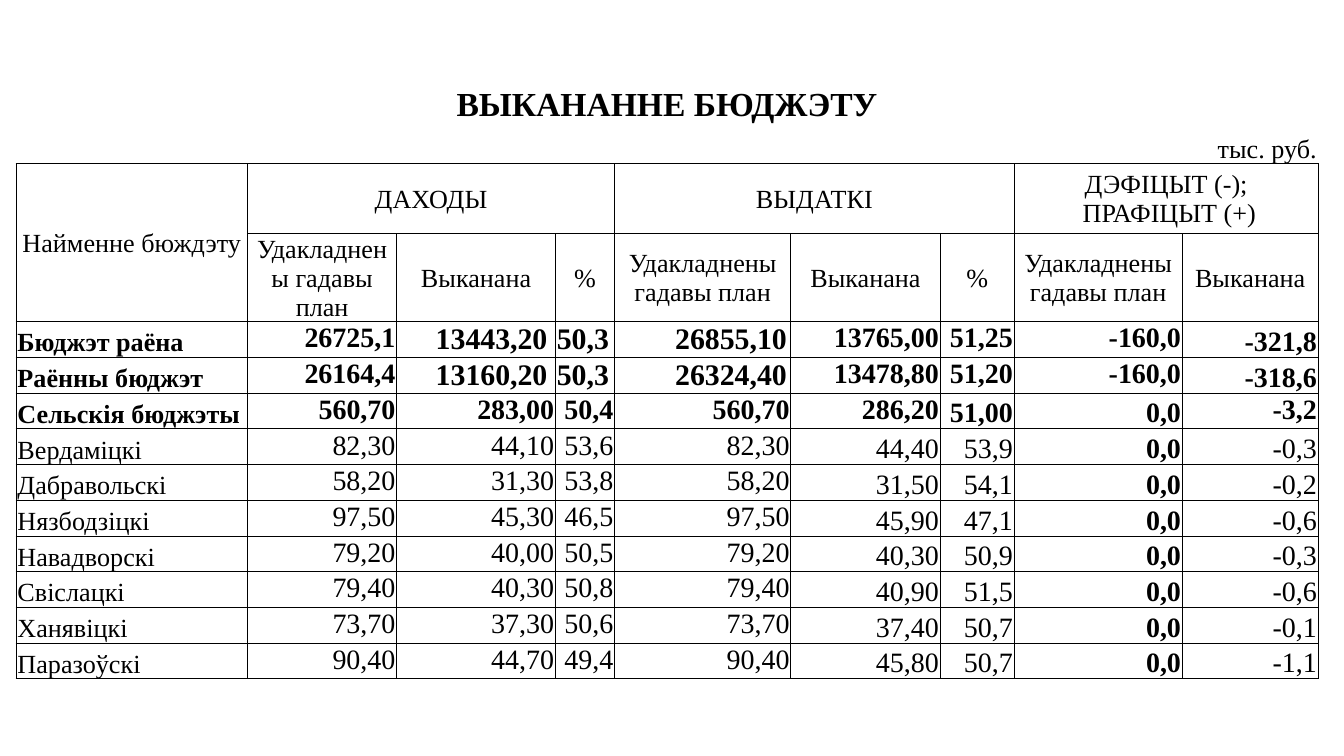
from lxml import etree
from pptx import Presentation
from pptx import util as u
from pptx.dml import color
from pptx.enum import text
from pptx.oxml import ns

COLORS = {"ink": "000000"}
FONT = "Times New Roman"
LEFT, CENTER, RIGHT = text.PP_ALIGN.LEFT, text.PP_ALIGN.CENTER, text.PP_ALIGN.RIGHT
TOP, MIDDLE, BOTTOM = text.MSO_ANCHOR.TOP, text.MSO_ANCHOR.MIDDLE, text.MSO_ANCHOR.BOTTOM

COLUMN_WIDTHS = [1.72, 1, 0.11, 0.78, 0.4, 0.44, 1.31, 0.89, 0.22, 0.55, 1.25, 0.12, 0.89]
# First grid column and column span of each field
FIELDS = [(0, 1), (1, 2), (3, 2), (5, 1), (6, 1), (7, 2), (9, 1), (10, 1), (11, 2)]
TITLE_ROW, UNIT_ROW, GROUP_ROW, FIELD_ROW, FIRST_BUDGET_ROW = range(5)
HEADER_HEIGHTS = [0.34, 0.27, 0.52, 0.65]

GROUPS = [(1, 5, "ДАХОДЫ"), (6, 4, "ВЫДАТКІ"), (10, 3, "ДЭФІЦЫТ (-);\n ПРАФІЦЫТ (+)")]
PLAN, DONE = "Удакладнены гадавы план", "Выканана"
FIELD_NAMES = [PLAN, DONE, "%", PLAN, DONE, "%", PLAN, DONE]

BUDGETS = [
    ("Бюджэт раёна", "26725,1", "13443,20", "50,3", "26855,10", "13765,00", "51,25", "-160,0", "-321,8"),
    ("Раённы бюджэт", "26164,4", "13160,20", "50,3", "26324,40", "13478,80", "51,20", "-160,0", "-318,6"),
    ("Сельскія бюджэты", "560,70", "283,00", "50,4", "560,70", "286,20", "51,00", "0,0", "-3,2"),
    ("Вердаміцкі", "82,30", "44,10", "53,6", "82,30", "44,40", "53,9", "0,0", "-0,3"),
    ("Дабравольскі", "58,20", "31,30", "53,8", "58,20", "31,50", "54,1", "0,0", "-0,2"),
    ("Нязбодзіцкі", "97,50", "45,30", "46,5", "97,50", "45,90", "47,1", "0,0", "-0,6"),
    ("Навадворскі", "79,20", "40,00", "50,5", "79,20", "40,30", "50,9", "0,0", "-0,3"),
    ("Свіслацкі", "79,40", "40,30", "50,8", "79,40", "40,90", "51,5", "0,0", "-0,6"),
    ("Ханявіцкі", "73,70", "37,30", "50,6", "73,70", "37,40", "50,7", "0,0", "-0,1"),
    ("Паразоўскі", "90,40", "44,70", "49,4", "90,40", "45,80", "50,7", "0,0", "-1,1"),
]
# Left indents of the larger, left-aligned totals in the first two rows
TOTAL_INDENTS = {2: 0.28, 3: 0, 4: 0.44}
# Fields set at the top of the cell, for each total row and for the villages
TOTAL_TOP_FIELDS = [{1, 2, 3, 4, 5, 6, 7}] * 2 + [{1, 2, 3, 4, 5, 8}]
VILLAGE_TOP_FIELDS = {1, 2, 3, 4}
BALANCE_PLAN = 7


def write(cell, words, size=14, bold=False, align=CENTER, anchor=MIDDLE, indent=0):
    cell.vertical_anchor = anchor
    cell.margin_left = u.Inches(0.01 + indent)
    cell.text_frame.text = words
    for paragraph in cell.text_frame.paragraphs:
        paragraph.alignment = align
        for run in paragraph.runs:
            run.font.name = FONT
            run.font.size = u.Pt(size)
            run.font.bold = bold
            run.font.color.rgb = color.RGBColor.from_string(COLORS["ink"])


def rule(cell, sides):
    """Draw thin lines on the given sides, in the order L, R, T, B."""
    properties = cell._tc.get_or_add_tcPr()
    for side in sides:
        line = etree.SubElement(properties, ns.qn(f"a:ln{side}"), w=str(u.Pt(0.5)))
        fill = etree.SubElement(line, ns.qn("a:solidFill"))
        etree.SubElement(fill, ns.qn("a:srgbClr"), val=COLORS["ink"])


def prepare_cell(cell, sides):
    cell.margin_left = cell.margin_right = cell.margin_top = u.Inches(0.01)
    cell.margin_bottom = 0
    rule(cell, sides)
    cell.fill.background()
    # Keeps empty cells from stretching their row
    etree.SubElement(cell.text_frame.paragraphs[0]._p, ns.qn("a:endParaRPr"), sz="1400")


def merged(table, row, column, columns=1, rows=1):
    cell = table.cell(row, column)
    if columns > 1 or rows > 1:
        cell.merge(table.cell(row + rows - 1, column + columns - 1))
    return cell


def fill_header(table):
    write(merged(table, TITLE_ROW, 0, len(COLUMN_WIDTHS)), "ВЫКАНАННЕ БЮДЖЭТУ", size=18, bold=True)
    for column in (2, 4, 8, 10):
        merged(table, UNIT_ROW, column, 2)
    write(table.cell(UNIT_ROW, 12), "тыс. руб.", align=RIGHT, anchor=BOTTOM)
    write(merged(table, GROUP_ROW, 0, rows=2), "Найменне бюждэту")
    for column, columns, name in GROUPS:
        write(merged(table, GROUP_ROW, column, columns), name)
    for (column, columns), name in zip(FIELDS[1:], FIELD_NAMES):
        write(merged(table, FIELD_ROW, column, columns), name)


def fill_budgets(table):
    for index, budget in enumerate(BUDGETS):
        is_total = index < len(TOTAL_TOP_FIELDS)
        top_fields = TOTAL_TOP_FIELDS[index] if is_total else VILLAGE_TOP_FIELDS
        for field, ((column, columns), words) in enumerate(zip(FIELDS, budget)):
            enlarged = index < 2 and field in TOTAL_INDENTS
            write(
                merged(table, FIRST_BUDGET_ROW + index, column, columns), words,
                size=16 if enlarged else 15 if field else 14,
                bold=is_total or field == BALANCE_PLAN,
                align=LEFT if enlarged or field == 0 else RIGHT,
                anchor=TOP if field in top_fields else BOTTOM,
                indent=TOTAL_INDENTS[field] if enlarged else 0,
            )


def add_budget_table(slide, left, top, width, height):
    heights = HEADER_HEIGHTS + [(height - sum(HEADER_HEIGHTS)) / len(BUDGETS)] * len(BUDGETS)
    frame = slide.shapes.add_table(
        len(heights), len(COLUMN_WIDTHS), *map(u.Inches, (left, top, width, height)))
    table = frame.table
    table.first_row = table.horz_banding = False
    scale = width / sum(COLUMN_WIDTHS)
    for column, column_width in zip(table.columns, COLUMN_WIDTHS):
        column.width = u.Inches(column_width * scale)
    for index, (row, row_height) in enumerate(zip(table.rows, heights)):
        row.height = u.Inches(row_height)
        sides = {TITLE_ROW: "", UNIT_ROW: "B"}.get(index, "LRTB")
        for cell in row.cells:
            prepare_cell(cell, sides)
    fill_header(table)
    fill_budgets(table)


def main():
    deck = Presentation()
    deck.slide_width, deck.slide_height = u.Inches(10), u.Inches(10 * 9 / 16)
    slide = deck.slides.add_slide(deck.slide_layouts[6])
    add_budget_table(slide, 0.12, 0.61, 9.69, 4.44)
    deck.save("out.pptx")


if __name__ == "__main__":
    main()
